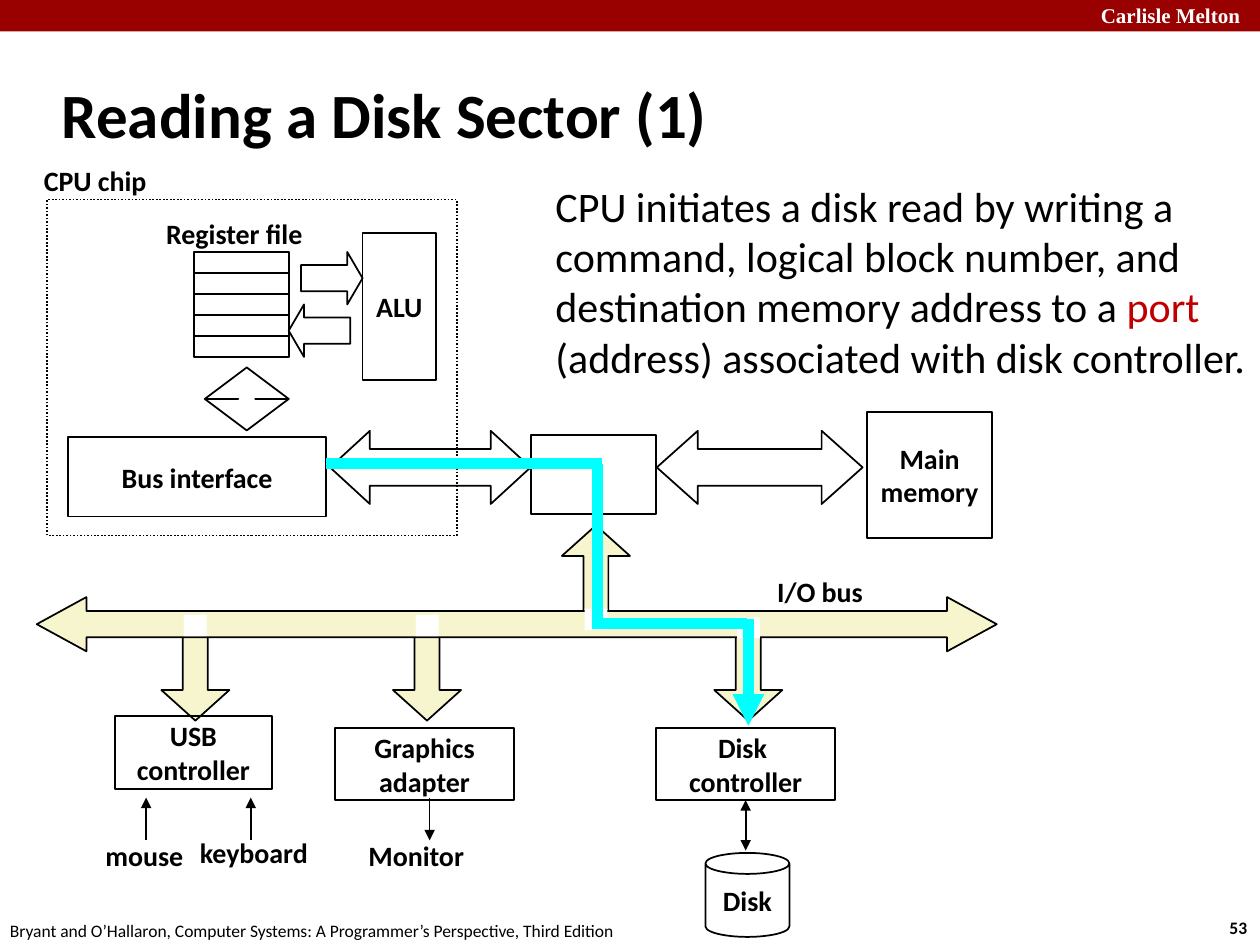
from dataclasses import dataclass

import lxml.etree
import pptx
import pptx.dml.color
import pptx.enum.dml
import pptx.enum.shapes
import pptx.enum.text
import pptx.oxml.ns
import pptx.util

Pt = pptx.util.Pt
qn = pptx.oxml.ns.qn
Shape = pptx.enum.shapes.MSO_SHAPE
Align = pptx.enum.text.PP_ALIGN
Anchor = pptx.enum.text.MSO_ANCHOR

BLACK, WHITE, BUS, SIGNAL = "000000", "FFFFFF", "F7F5CD", "00FFFF"


@dataclass
class Box:
    left: float
    top: float
    width: float
    height: float
    text: str = ""
    kind: Shape = Shape.RECTANGLE
    fill: str | None = None
    line: str | None = BLACK
    adjust: tuple[float, ...] = ()


@dataclass
class Label:
    left: float
    top: float
    width: float
    height: float
    text: str
    align: Align = Align.LEFT


@dataclass
class Wire:
    x1: float
    y1: float
    x2: float
    y2: float
    color: str = BLACK
    weight: float = 1
    ends: tuple[str, ...] = ()


def rgb(color: str) -> pptx.dml.color.RGBColor:
    return pptx.dml.color.RGBColor.from_string(color)


def write(frame, text, *, size=16, bold=True, color=BLACK, font="Calibri",
          align=Align.LEFT, anchor=Anchor.MIDDLE, wrap=False, grow=False,
          accents=None):
    """Write one paragraph per line; accents maps a word to its own colour."""
    frame.word_wrap = wrap
    frame.vertical_anchor = anchor
    sizing = pptx.enum.text.MSO_AUTO_SIZE
    frame.auto_size = sizing.SHAPE_TO_FIT_TEXT if grow else sizing.NONE
    for index, content in enumerate(text.split("\n")):
        paragraph = frame.add_paragraph() if index else frame.paragraphs[0]
        paragraph.alignment = align
        pieces = [(content, color)]
        for word, accent in (accents or {}).items():
            before, after = content.split(word)
            pieces = [(before, color), (word, accent), (after, color)]
        for piece, piece_color in pieces:
            run = paragraph.add_run()
            run.text = piece
            run.font.name, run.font.size, run.font.bold = font, Pt(size), bold
            run.font.color.rgb = rgb(piece_color)


def draw_box(slide, box: Box):
    shape = slide.shapes.add_shape(
        box.kind, Pt(box.left), Pt(box.top), Pt(box.width), Pt(box.height))
    shape.shadow.inherit = False
    if box.fill:
        shape.fill.solid()
        shape.fill.fore_color.rgb = rgb(box.fill)
    else:
        shape.fill.background()
    if box.line:
        shape.line.color.rgb = rgb(box.line)
        shape.line.width = Pt(1)
    else:
        shape.line.fill.background()
    for index, value in enumerate(box.adjust):
        shape.adjustments[index] = value
    if box.text:
        write(shape.text_frame, box.text, align=Align.CENTER)
    return shape


def draw_label(slide, label: Label, **text_format) -> None:
    box = slide.shapes.add_textbox(
        Pt(label.left), Pt(label.top), Pt(label.width), Pt(label.height))
    write(box.text_frame, label.text, align=label.align,
          **{"grow": True, **text_format})


def draw_wire(slide, wire: Wire):
    connector = slide.shapes.add_connector(
        pptx.enum.shapes.MSO_CONNECTOR.STRAIGHT,
        Pt(wire.x1), Pt(wire.y1), Pt(wire.x2), Pt(wire.y2))
    connector.line.color.rgb = rgb(wire.color)
    connector.line.width = Pt(wire.weight)
    properties = connector._element.spPr
    for end in wire.ends:
        lxml.etree.SubElement(properties.find(qn("a:ln")), qn(f"a:{end}"),
                              type="triangle")
    lxml.etree.SubElement(properties, qn("a:effectLst"))
    return connector


def draw_frame(slide) -> None:
    """Header band, footer and title."""
    draw_box(slide, Box(0, 0, 720, 18, fill="990000", line=None))
    draw_label(slide, Label(622, -2.2, 103, 21.6, "Carlisle Melton"),
               size=12, color=WHITE, font="Times New Roman")
    draw_label(slide, Label(695.5, 520.6, 26.6, 19.4, "53"), size=10)
    draw_label(slide, Label(-1.4, 522, 365.8, 19.4,
                            "Bryant and O’Hallaron, Computer Systems: "
                            "A Programmer’s Perspective, Third Edition"),
               size=10, bold=False)
    title = slide.shapes.title
    title.left, title.top, title.width, title.height = map(
        Pt, (28.1, 34.6, 597.6, 59.8))
    write(title.text_frame, "Reading a Disk Sector (1)", size=36, wrap=True)


def draw_processor(slide) -> None:
    """CPU chip, its links to main memory, and the chip outline."""
    both_ways = Shape.LEFT_RIGHT_ARROW
    parts = [
        Box(495.4, 235.4, 71.6, 72, "Main\nmemory"),
        Box(375.3, 246.2, 117.6, 41.8, kind=both_ways, adjust=(0.5, 0.56)),
        Box(303.4, 248.4, 71.6, 45.4),
        Box(188.6, 246.2, 114.6, 41.8, kind=both_ways, adjust=(0.5, 0.545)),
        *(Box(111, 144 + 12 * row, 54, 12) for row in range(5)),
        Box(172, 144, 35.2, 30, kind=Shape.RIGHT_ARROW, adjust=(0.5, 0.292)),
        Box(165, 174, 35.2, 30, kind=Shape.LEFT_ARROW, adjust=(0.5, 0.292)),
        Box(207.2, 133.2, 42, 84, "ALU"),
        Box(117, 210, 48, 36, kind=Shape.UP_DOWN_ARROW, adjust=(0.5, 0.2)),
        Box(38.9, 249.8, 147.6, 45.4, "Bus interface"),
    ]
    for part in parts:
        draw_box(slide, part)
    chip = draw_box(slide, Box(27, 114, 234, 192))
    chip.line.dash_style = pptx.enum.dml.MSO_LINE.ROUND_DOT
    draw_label(slide, Label(87.1, 120.2, 93.6, 26.6, "Register file", Align.CENTER))
    draw_label(slide, Label(18, 90, 74.2, 26.6, "CPU chip"))


def draw_devices(slide) -> None:
    """I/O bus with its branches, controllers and attached devices."""
    branch = (0.367, 0.449)
    draw_box(slide, Box(321.1, 300.2, 38.9, 54, kind=Shape.UP_ARROW,
                        fill=BUS, adjust=branch))
    for left in (92.2, 224.6, 408.2):
        draw_box(slide, Box(left, 357.8, 38.9, 54, kind=Shape.DOWN_ARROW,
                            fill=BUS, adjust=branch))
    draw_box(slide, Box(65.5, 409.3, 90, 41.4, "USB\ncontroller"))
    draw_box(slide, Box(191.5, 416.2, 102.2, 41, "Graphics\nadapter"))
    controller = draw_box(slide, Box(375, 416.2, 102.2, 41, "Disk \ncontroller"))
    draw_box(slide, Box(403.1, 487.4, 48, 48, "Disk", Shape.CAN, adjust=(0.25,)))
    for x, end in ((83.5, "headEnd"), (143.3, "headEnd"), (245.5, "tailEnd")):
        draw_wire(slide, Wire(x, 455.8, x, 480.2, ends=(end,)))
    disk_link = draw_wire(slide, Wire(426.1, 457.2, 426.1, 486,
                                      ends=("headEnd", "tailEnd")))
    disk_link.begin_connect(controller, 2)
    for label in (Label(52.6, 475.2, 59.8, 26.6, "mouse", Align.CENTER),
                  Label(106.6, 473.8, 77, 26.6, "keyboard", Align.CENTER),
                  Label(203, 475.2, 69.8, 26.6, "Monitor", Align.CENTER)):
        draw_label(slide, label)

    draw_box(slide, Box(21, 341.2, 548.6, 31, kind=Shape.LEFT_RIGHT_ARROW,
                        fill=BUS, adjust=(0.486, 0.915)))
    for left, top in ((105.1, 351.4), (237.6, 351.4), (421.2, 352.8), (334.1, 347.8)):
        draw_box(slide, Box(left, top, 13, 12.2, fill=WHITE, line=None))
    draw_label(slide, Label(437, 324.7, 64.1, 26.6, "I/O bus"))


def draw_read_command(slide) -> None:
    """Path of the command from the CPU to the disk controller."""
    for wire in (Wire(186.5, 265, 344.2, 265, SIGNAL, 6),
                 Wire(341.3, 265, 341.3, 354.2, SIGNAL, 6),
                 Wire(338.4, 356.4, 427, 356.4, SIGNAL, 6),
                 Wire(427.7, 353.5, 427.7, 414.7, SIGNAL, 6, ("tailEnd",))):
        draw_wire(slide, wire)
    draw_label(slide, Label(310.3, 99.4, 419, 123.8,
                            "CPU initiates a disk read by writing a command, "
                            "logical block number, and destination memory address "
                            "to a port (address) associated with disk controller."),
               size=24, bold=False, wrap=True, anchor=Anchor.TOP,
               accents={"port ": "C00000"})


def main() -> None:
    deck = pptx.Presentation()
    deck.slide_width, deck.slide_height = Pt(720), Pt(540)
    slide = deck.slides.add_slide(deck.slide_layouts.get_by_name("Title Only"))
    draw_frame(slide)
    draw_processor(slide)
    draw_devices(slide)
    draw_read_command(slide)
    deck.save("out.pptx")


if __name__ == "__main__":
    main()
